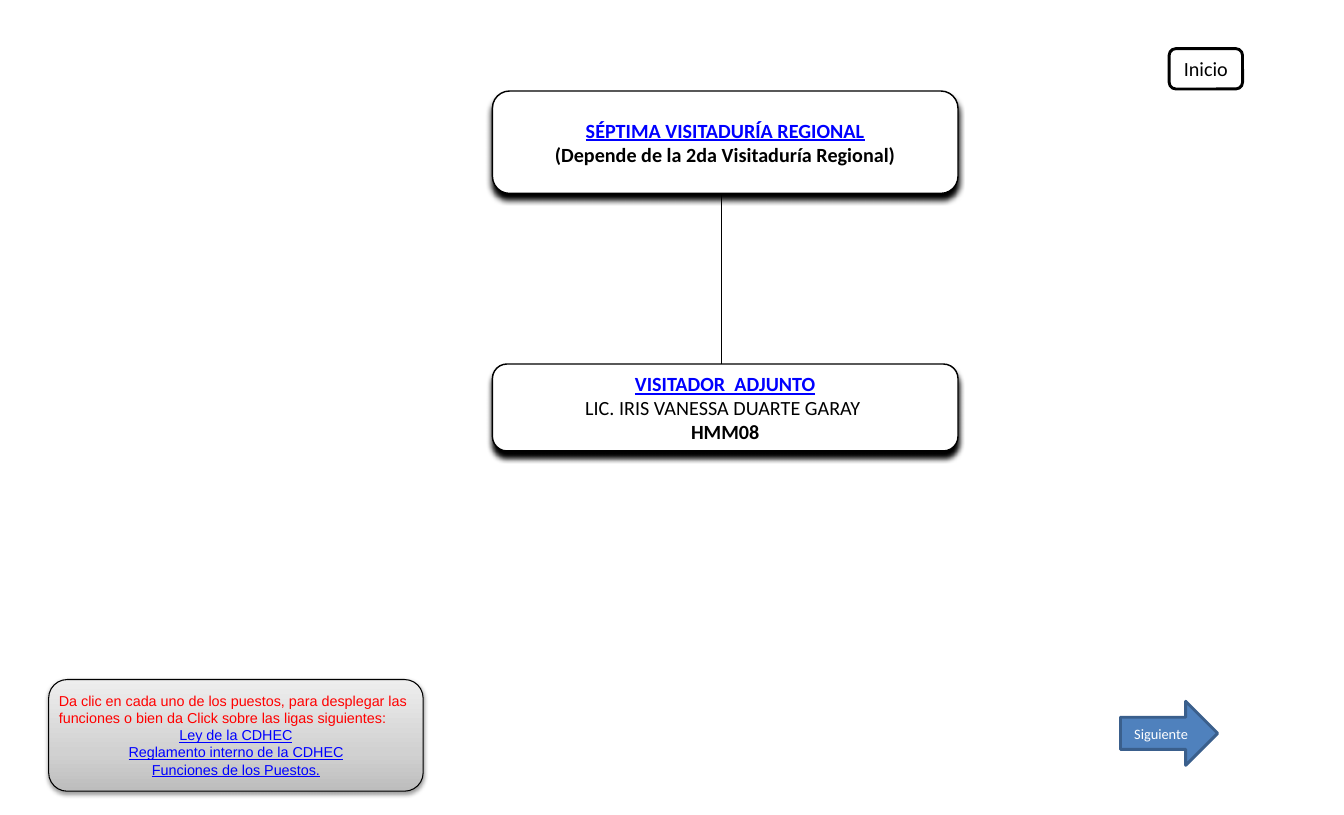
"""Build the organisation chart slide of the seventh regional office."""
from dataclasses import dataclass

from lxml.etree import SubElement
from pptx import Presentation
from pptx.dml.color import RGBColor
from pptx.enum.shapes import MSO_CONNECTOR, MSO_SHAPE
from pptx.enum.text import MSO_ANCHOR, MSO_AUTO_SIZE, PP_ALIGN
from pptx.oxml.ns import qn
from pptx.util import Inches, Pt


@dataclass(frozen=True)
class Theme:
    """Colours, fonts and type sizes of the slide."""
    black: str = "000000"
    white: str = "FFFFFF"
    link: str = "0000FF"
    warning: str = "FF0000"
    arrow: str = "4F81BD"
    arrow_edge: str = "3A5F8C"
    panel: tuple = ((0, "BDBDBD"), (35, "D1D1D1"), (100, "EEEEEE"))
    body_font: str = "Calibri"
    help_font: str = "Arial"
    large: int = 14
    small: int = 10


THEME = Theme()
LINK = {"color": THEME.link, "underline": True}
BOLD_LINK = {**LINK, "bold": True}
HELP = {"font": THEME.help_font, "size": THEME.small}
HELP_LINK = {**HELP, **LINK}

POSTS = [
    {"top": 0.88, "height": 0.99, "lines": [
        ("SÉPTIMA VISITADURÍA REGIONAL", BOLD_LINK),
        ("(Depende de la 2da Visitaduría Regional)", {"bold": True}),
    ]},
    {"top": 3.52, "height": 0.84, "lines": [
        ("VISITADOR  ADJUNTO", BOLD_LINK),
        ("LIC. IRIS VANESSA DUARTE GARAY ", {}),
        ("HMM08", {"bold": True}),
    ]},
]
HELP_LINES = [
    ("Da clic en cada uno de los puestos, para desplegar las funciones "
     "o bien da Click sobre las ligas siguientes:",
     {**HELP, "color": THEME.warning, "align": PP_ALIGN.LEFT}),
    ("Ley de la CDHEC", HELP_LINK),
    ("Reglamento interno de la CDHEC", HELP_LINK),
    ("Funciones de los Puestos.", HELP_LINK),
]
HOME = [("Inicio", {})]
NEXT = [("Siguiente", {"size": THEME.small, "color": THEME.white})]

POST_LEFT, POST_WIDTH = 4.76, 4.5
STEM_X, STEM_TOP, STEM_BOTTOM = 6.97, 1.89, 3.62
HELP_LEFT, HELP_WIDTH = 0.47, 3.62


def write_line(para, text, font=THEME.body_font, size=THEME.large, color=THEME.black,
               bold=False, underline=False, align=PP_ALIGN.CENTER):
    """Put one formatted line of text in a paragraph."""
    para.alignment = align
    span = para.add_run()
    span.text = text
    span.font.name = font
    span.font.size = Pt(size)
    span.font.bold = bold
    span.font.underline = underline
    span.font.color.rgb = RGBColor.from_string(color)


def write_lines(frame, lines):
    """Fill a text frame with one paragraph per line."""
    for index, (text, style) in enumerate(lines):
        para = frame.add_paragraph() if index else frame.paragraphs[0]
        write_line(para, text, **style)


def add_box(page, kind, place, lines=(), fill=THEME.white, edge=THEME.black, weight=1.0):
    """Add a filled, outlined shape with centred text."""
    box = page.shapes.add_shape(kind, *map(Inches, place))
    box.shadow.inherit = False
    box.fill.solid()
    box.fill.fore_color.rgb = RGBColor.from_string(fill)
    box.line.color.rgb = RGBColor.from_string(edge)
    box.line.width = Pt(weight)
    box.text_frame.vertical_anchor = MSO_ANCHOR.MIDDLE
    write_lines(box.text_frame, lines)
    return box


def add_shadow(box, blur, distance, opacity):
    """Drop a black shadow straight below a shape."""
    effects = box.element.spPr.find(qn("a:effectLst"))
    shadow = SubElement(effects, qn("a:outerShdw"), blurRad=str(Pt(blur)),
                        dist=str(Pt(distance)), dir="5400000", rotWithShape="0")
    color = SubElement(shadow, qn("a:srgbClr"), val=THEME.black)
    SubElement(color, qn("a:alpha"), val=str(opacity * 1000))


def shade(box, stops):
    """Fill a shape with a gradient that rises from its bottom."""
    box.fill.gradient()
    box.fill.gradient_angle = 90
    stop_list = box.element.spPr.find(qn("a:gradFill")).find(qn("a:gsLst"))
    for old_stop in list(stop_list):
        stop_list.remove(old_stop)
    for position, color in stops:
        stop = SubElement(stop_list, qn("a:gs"), pos=str(position * 1000))
        SubElement(stop, qn("a:srgbClr"), val=color)


def add_post(page, top, height, lines):
    """Add one post of the chart."""
    box = add_box(page, MSO_SHAPE.ROUNDED_RECTANGLE,
                  (POST_LEFT, top, POST_WIDTH, height), lines)
    add_shadow(box, blur=4, distance=4, opacity=100)
    frame = box.text_frame
    frame.word_wrap = False
    frame.margin_left = frame.margin_right = Inches(0.17)
    frame.margin_top = frame.margin_bottom = Inches(0.09)


def add_stem(page):
    """Add the line between the two posts."""
    stem = page.shapes.add_connector(MSO_CONNECTOR.STRAIGHT, Inches(STEM_X), Inches(STEM_TOP),
                                     Inches(STEM_X), Inches(STEM_BOTTOM))
    stem.line.color.rgb = RGBColor.from_string(THEME.black)
    stem.line.width = Pt(0.75)
    SubElement(stem.element.spPr, qn("a:effectLst"))


def add_help(page):
    """Add the shaded panel and its instructions."""
    panel = add_box(page, MSO_SHAPE.ROUNDED_RECTANGLE,
                    (HELP_LEFT, 6.57, HELP_WIDTH, 1.08), weight=0.75)
    shade(panel, THEME.panel)
    add_shadow(panel, blur=3.1, distance=1.6, opacity=38)
    place = (HELP_LEFT, 6.64, HELP_WIDTH, 0.94)
    frame = page.shapes.add_textbox(*map(Inches, place)).text_frame
    frame.word_wrap = True
    frame.auto_size = MSO_AUTO_SIZE.SHAPE_TO_FIT_TEXT
    write_lines(frame, HELP_LINES)


def main():
    """Compose the slide and save it."""
    deck = Presentation()
    deck.slide_width, deck.slide_height = Inches(12.99), Inches(7.88)
    page = deck.slides.add_slide(deck.slide_layouts[6])
    head, deputy = POSTS
    add_post(page, **head)
    add_stem(page)
    add_post(page, **deputy)
    add_box(page, MSO_SHAPE.ROUNDED_RECTANGLE, (11.3, 0.47, 0.71, 0.39), HOME, weight=2)
    add_help(page)
    add_box(page, MSO_SHAPE.RIGHT_ARROW, (10.83, 6.78, 0.94, 0.62), NEXT,
            fill=THEME.arrow, edge=THEME.arrow_edge, weight=2)
    deck.save("out.pptx")


if __name__ == "__main__":
    main()
